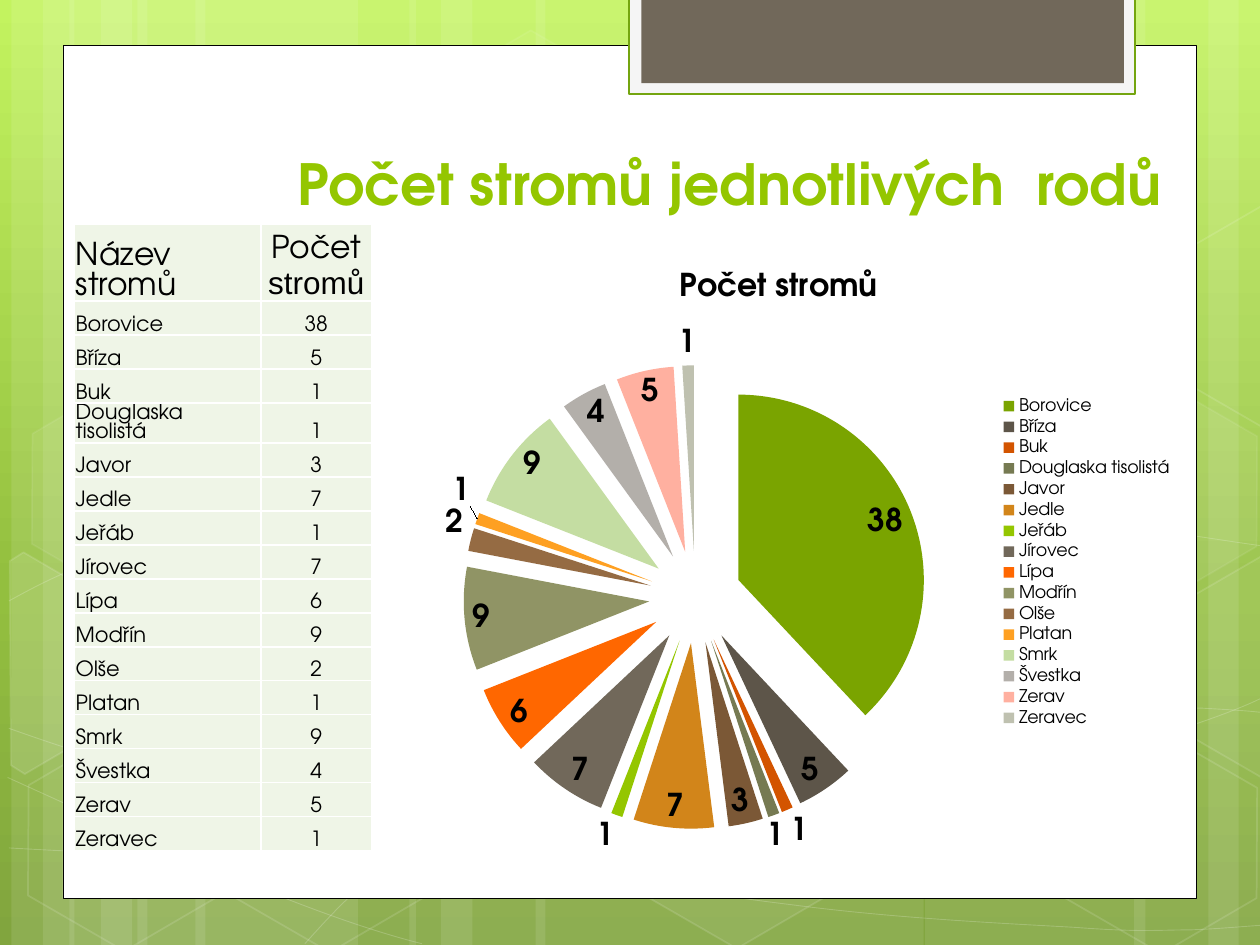
from copy import deepcopy
from math import cos, radians, sin
from typing import NamedTuple

from lxml import etree
from pptx import Presentation
from pptx.chart.data import CategoryChartData
from pptx.dml.color import RGBColor
from pptx.enum.chart import XL_CHART_TYPE as ChartType, XL_LABEL_POSITION as LabelPosition
from pptx.enum.chart import XL_LEGEND_POSITION as LegendPosition
from pptx.enum.shapes import MSO_SHAPE as Preset
from pptx.enum.text import MSO_ANCHOR as Anchor, PP_ALIGN as Align
from pptx.oxml.ns import qn
from pptx.util import Inches, Pt

FONT = "TeX Gyre Adventor"
BLACK, WHITE, GREEN, CELL = "000000", "FFFFFF", "94C600", "EFF5E7"
SERIES_NAME = "Počet stromů"
TILT = 30


class Tree(NamedTuple):
    name: str
    count: int
    color: str


class Band(NamedTuple):
    left: float
    width: float
    rotation: int = 0


class Hexagon(NamedTuple):
    left: float
    top: float
    fill_alpha: int
    line_alpha: int


class CutHexagon(NamedTuple):
    center: tuple
    points: list
    fill_alpha: int


TREES = [
    Tree("Borovice", 38, "7AA400"), Tree("Bříza", 5, "5D5549"),
    Tree("Buk", 1, "D35400"), Tree("Douglaska tisolistá", 1, "767A52"),
    Tree("Javor", 3, "7B5836"), Tree("Jedle", 7, "D2851A"),
    Tree("Jeřáb", 1, "94C600"), Tree("Jírovec", 7, "71685A"),
    Tree("Lípa", 6, "FF6700"), Tree("Modřín", 9, "909465"),
    Tree("Olše", 2, "956B43"), Tree("Platan", 1, "FEA022"),
    Tree("Smrk", 9, "C4DDA2"), Tree("Švestka", 4, "B3AFAA"),
    Tree("Zerav", 5, "FFB0A0"), Tree("Zeravec", 1, "BFC1B0"),
]
BANDS = [
    Band(1.09, 1.75), Band(0.09, 0.5), Band(0.34, 0.83), Band(1.55, 1.75),
    Band(0.55, 0.5), Band(0.8, 0.83), Band(7.34, 1.75, 180), Band(9.59, 0.5, 180),
    Band(9, 0.83, 180), Band(4.25, 3.08), Band(3.25, 0.5), Band(3.5, 0.83),
]
# Each curve is a start point followed by cubic segments of three points.
CURVES = [
    [(0.07, 6.73), (0.61, 6.76), (1.15, 6.79), (1.9, 6.78), (2.65, 6.77), (3.58, 6.75),
     (4.58, 6.65), (5.58, 6.55), (7, 6.36), (7.92, 6.17), (8.83, 5.98), (9.77, 5.68), (10.07, 5.51)],
    [(0.07, 4.77), (0.36, 4.61), (0.65, 4.46), (1.21, 4.31), (1.78, 4.16), (2.59, 3.94),
     (3.47, 3.87), (4.36, 3.8), (5.44, 3.79), (6.54, 3.87), (7.64, 3.95), (9.47, 4.26), (10.07, 4.34)],
    [(0.06, 6.17), (1.27, 6.72), (2.47, 7.27), (3.35, 7.49)],
    [(0.07, 5.78), (0.38, 5.89), (0.7, 6), (1.28, 6.16), (1.86, 6.31), (2.73, 6.56),
     (3.57, 6.73), (4.4, 6.9), (5.45, 7.08), (6.28, 7.18), (7.11, 7.29), (8, 7.33),
     (8.53, 7.36), (9.06, 7.4), (9.19, 7.38), (9.45, 7.38), (9.71, 7.37), (9.89, 7.35), (10.07, 7.34)],
    [(2.42, 7.49), (2.6, 7.29), (2.78, 7.09), (3.02, 6.91), (3.26, 6.72), (3.6, 6.53),
     (3.88, 6.39), (4.16, 6.25), (4.33, 6.19), (4.69, 6.09), (5.06, 5.99), (5.73, 5.85),
     (6.08, 5.78), (6.44, 5.71), (6.49, 5.71), (6.8, 5.69), (7.11, 5.66), (7.6, 5.63),
     (7.94, 5.62), (8.29, 5.61), (8.86, 5.62), (8.86, 5.62), (9.08, 5.62), (9.31, 5.62),
     (9.53, 5.62), (9.71, 5.63), (9.88, 5.64), (9.97, 5.65), (10.06, 5.66), (10.03, 5.65), (10.06, 5.66)],
]
HEXAGONS = [
    Hexagon(3.34, 0.36, 4, 8), Hexagon(4.97, 5.89, 6, 12), Hexagon(0.11, 5.91, 0, 12),
    Hexagon(0.14, 3.12, 7, 8), Hexagon(1.74, 5.92, 0, 12), Hexagon(7.53, 4.53, 10, 12),
    Hexagon(8.34, 5.93, 0, 12), Hexagon(8.34, 3.14, 7, 8),
]
CUT_HEXAGONS = [
    CutHexagon((0.36, 5.36), [(0.08, 4.45), (0.19, 4.38), (0.96, 4.83), (0.95, 5.7),
                              (0.2, 6.14), (0.09, 6.07)], 10),
    CutHexagon((9.85, 5.2), [(9.26, 4.85), (10.02, 4.41), (10.09, 4.46), (10.09, 6.13),
                             (10.02, 6.17), (9.26, 5.73)], 4),
    CutHexagon((9.85, 2.41), [(9.26, 2.07), (10.02, 1.63), (10.1, 1.68), (10.09, 3.35),
                              (10.02, 3.39), (9.26, 2.95)], 0),
]


def paint(color_format, color: str, alpha: int = 100) -> None:
    """Set a colour and its opacity in percent."""
    color_format.rgb = RGBColor.from_string(color)
    if alpha < 100:
        element = color_format._xFill.find(qn("a:srgbClr"))
        etree.SubElement(element, qn("a:alpha"), val=str(alpha * 1000))


def style(shape, fill: str = "", line: str = "", width: float = 1,
          fill_alpha: int = 100, line_alpha: int = 100) -> None:
    shape.shadow.inherit = False
    if fill and fill_alpha:
        shape.fill.solid()
        paint(shape.fill.fore_color, fill, fill_alpha)
    else:
        shape.fill.background()
    if line:
        shape.line.width = Pt(width)
        paint(shape.line.color, line, line_alpha)
    else:
        shape.line.fill.background()


def set_font(font, size: float, color: str = BLACK, bold: bool = False, name: str = FONT) -> None:
    font.name, font.size, font.bold = name, Pt(size), bold
    paint(font.color, color)


def add_preset(slide, preset, left: float, top: float, width: float, height: float):
    return slide.shapes.add_shape(preset, Inches(left), Inches(top), Inches(width), Inches(height))


def add_outline(slide, points: list, close: bool):
    start, *others = [(Inches(x), Inches(y)) for x, y in points]
    builder = slide.shapes.build_freeform(*start)
    builder.add_line_segments(others, close=close)
    return builder.convert_to_shape()


def add_curve(slide, points: list):
    """Draw the control points, then join every three into a cubic segment."""
    curve = add_outline(slide, points, False)
    lines = list(curve._element.iter(qn("a:lnTo")))
    outline = lines[0].getparent()
    for first in range(0, len(lines), 3):
        segment = etree.SubElement(outline, qn("a:cubicBezTo"))
        for line in lines[first:first + 3]:
            segment.append(line[0])
            outline.remove(line)
    return curve


def turn_back(point: tuple, center: tuple) -> tuple:
    """Undo the tilt of a point about a center."""
    x, y = point[0] - center[0], point[1] - center[1]
    c, s = cos(radians(TILT)), sin(radians(TILT))
    return center[0] + x * c + y * s, center[1] - x * s + y * c


def add_background(slide) -> None:
    fill = slide.background.fill
    fill.gradient()
    fill.gradient_angle = 270
    stop_list = slide.element.find(".//" + qn("a:gsLst"))
    stop_list.append(deepcopy(stop_list[0]))
    for stop, position, color in zip(fill.gradient_stops, (0, 0.62, 1), ("C3F35F", "93BF3F", "81A53E")):
        stop.position = position
        paint(stop.color, color)


def add_decoration(slide) -> None:
    for item in BANDS:
        band = add_preset(slide, Preset.RECTANGLE, item.left, 0, item.width, 7.5)
        band.rotation = item.rotation
        style(band, WHITE, fill_alpha=10)
    for points in CURVES:
        style(add_curve(slide, points), line=WHITE, width=0.5, line_alpha=20)
    for item in HEXAGONS:
        hexagon = add_preset(slide, Preset.HEXAGON, item.left, item.top, 1.75, 1.52)
        hexagon.adjustments[0] = 0.285
        hexagon.rotation = TILT
        style(hexagon, WHITE, WHITE, 1, item.fill_alpha, item.line_alpha)
    for item in CUT_HEXAGONS:
        hexagon = add_outline(slide, [turn_back(point, item.center) for point in item.points], True)
        hexagon.rotation = TILT
        style(hexagon, WHITE, WHITE, 1, item.fill_alpha, 12)
    style(add_preset(slide, Preset.RECTANGLE, 0.5, 0.36, 9, 6.77), WHITE, BLACK, 0.5)
    style(add_preset(slide, Preset.RECTANGLE, 4.99, -0.02, 4.02, 0.77), "F5F5F5", "74A510", 1.25)
    style(add_preset(slide, Preset.RECTANGLE, 5.09, -0.02, 3.83, 0.68), "71685A")


def add_title(slide) -> None:
    frame = slide.shapes.add_textbox(Inches(2.01), Inches(0.52), Inches(7.56), Inches(1.25)).text_frame
    frame.word_wrap = True
    frame.vertical_anchor = Anchor.BOTTOM
    frame.text = "Počet stromů jednotlivých  rodů"
    frame.paragraphs[0].alignment = Align.CENTER
    set_font(frame.paragraphs[0].runs[0].font, 32.4, GREEN, True)


def fill_cell(cell, text: str, size: float, alignment) -> None:
    cell.margin_left = cell.margin_right = cell.margin_top = Inches(0.01)
    cell.margin_bottom = 0
    cell.vertical_anchor = Anchor.BOTTOM
    properties = cell._tc.get_or_add_tcPr()
    for side in ("a:lnL", "a:lnR", "a:lnT", "a:lnB"):
        border = etree.SubElement(properties, qn(side), w=str(Pt(1)))
        solid = etree.SubElement(border, qn("a:solidFill"))
        etree.SubElement(solid, qn("a:srgbClr"), val=WHITE)
    cell.fill.solid()
    paint(cell.fill.fore_color, CELL)
    cell.text_frame.text = text
    paragraph = cell.text_frame.paragraphs[0]
    paragraph.alignment = alignment
    set_font(paragraph.runs[0].font, size)


def add_tree_table(slide) -> None:
    rows = [("Název stromů", "Počet")] + [(tree.name, str(tree.count)) for tree in TREES]
    table = slide.shapes.add_table(len(rows), 2, Inches(0.59), Inches(1.78), Inches(2.36), Inches(4.91)).table
    table.columns[0].width, table.columns[1].width = Inches(1.48), Inches(0.88)
    for index, row in enumerate(rows):
        table.rows[index].height = Inches(0.27 if index else 0.59)
        for column, alignment in enumerate((Align.LEFT, Align.CENTER)):
            fill_cell(table.cell(index, column), row[column], 12 if index else 18, alignment)
    count_heading = table.cell(0, 1).text_frame.paragraphs[0]
    run = count_heading.add_run()
    run.text = " stromů"
    set_font(run.font, 18, name="Arial")
    count_heading.line_spacing = Pt(20.5)
    table.cell(4, 0).text_frame.paragraphs[0].line_spacing = Pt(11)


def add_tree_chart(slide) -> None:
    data = CategoryChartData()
    data.categories = [tree.name for tree in TREES]
    data.add_series(SERIES_NAME, [tree.count for tree in TREES])
    chart = slide.shapes.add_chart(ChartType.PIE_EXPLODED, Inches(2.95), Inches(1.94),
                                   Inches(6.46), Inches(5.04), data).chart
    set_font(chart.font, 10)
    chart.has_title = True
    chart.chart_title.text_frame.text = SERIES_NAME
    set_font(chart.chart_title.text_frame.paragraphs[0].runs[0].font, 18, bold=True)
    chart.has_legend = True
    chart.legend.position = LegendPosition.RIGHT
    chart.legend.include_in_layout = False
    plot = chart.plots[0]
    plot.vary_by_categories = True
    series = plot.series[0]
    series._element.find(qn("c:explosion")).set("val", "25")
    for index, tree in enumerate(TREES):
        point_fill = series.points[index].format.fill
        point_fill.solid()
        paint(point_fill.fore_color, tree.color)
    plot.has_data_labels = True
    labels = plot.data_labels
    labels.show_value, labels.show_percentage = True, False
    labels.position = LabelPosition.BEST_FIT
    set_font(labels.font, 18, bold=True)


def main() -> None:
    presentation = Presentation()
    presentation.slide_width, presentation.slide_height = Inches(10), Inches(7.5)
    slide = presentation.slides.add_slide(presentation.slide_layouts[6])
    add_background(slide)
    add_decoration(slide)
    add_title(slide)
    add_tree_table(slide)
    add_tree_chart(slide)
    presentation.save("out.pptx")


if __name__ == "__main__":
    main()
